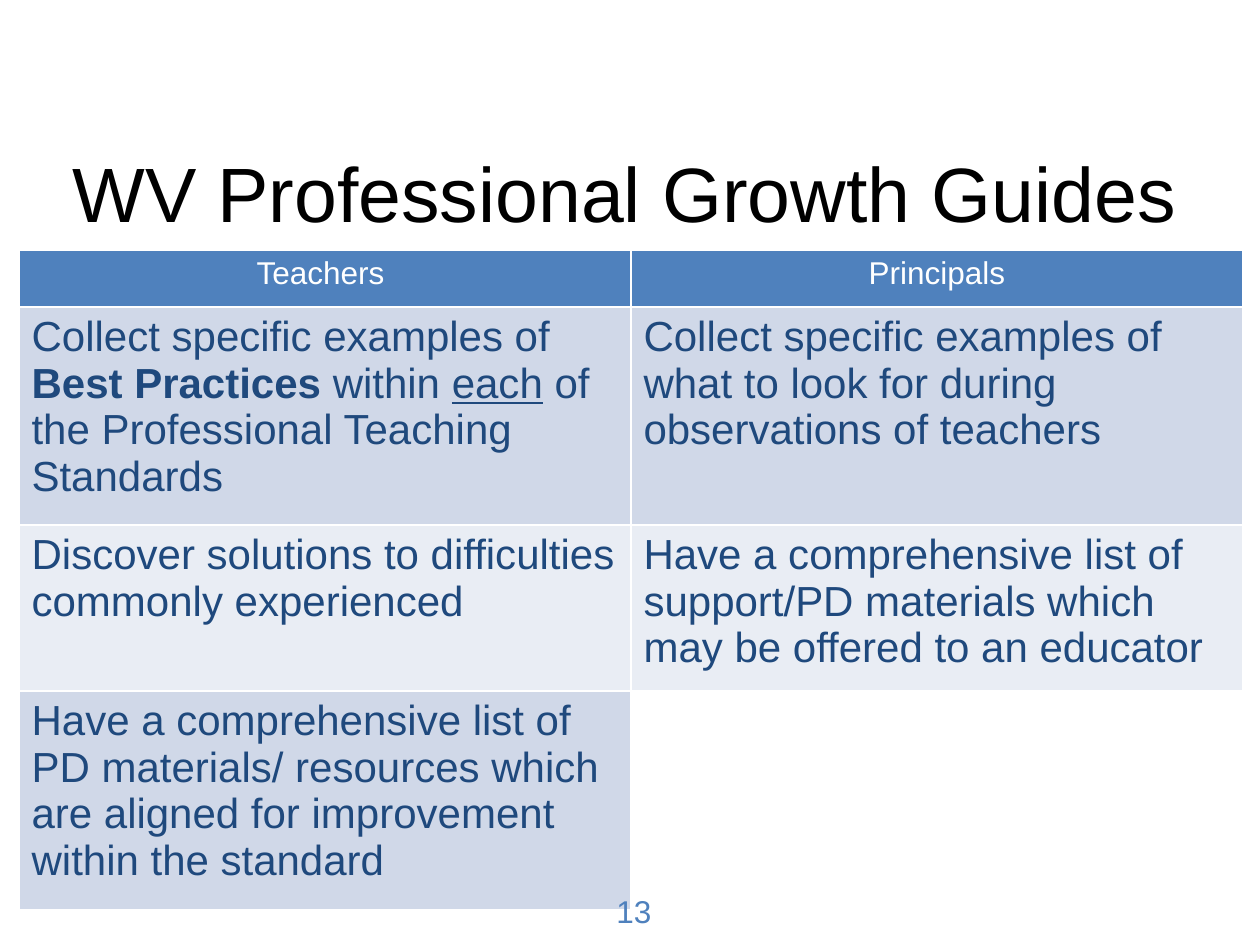
from pptx import Presentation
from pptx.dml.color import RGBColor
from pptx.enum.text import MSO_ANCHOR as Anchor, PP_ALIGN as Align
from pptx.util import Pt

PX = 914400 // 126  # EMU per pixel
FONT = "Arial"
BLACK, WHITE, NAVY, BLUE = "000000", "FFFFFF", "1F497D", "4F81BD"
BANDS = ["D0D8E8", "E9EDF4"]


def color(hex_text):
    return RGBColor.from_string(hex_text)


class Deck:
    def __init__(self, width, height):
        self.prs = Presentation()
        self.prs.slide_width, self.prs.slide_height = width * PX, height * PX
        self.s = self.prs.slides.add_slide(self.prs.slide_layouts[6])

    def add_runs(self, p, runs, size, ink, align=Align.LEFT):
        """Fill a paragraph with (text, style) runs; style is '', 'bold' or 'underline'."""
        p.alignment = align
        for text, style in runs:
            r = p.add_run()
            r.text = text
            r.font.name, r.font.size = FONT, Pt(size)
            r.font.color.rgb = color(ink)
            r.font.bold = style == "bold"
            r.font.underline = style == "underline"

    def text(self, box, text, size, ink, align=Align.LEFT, anchor=Anchor.TOP):
        tf = self.s.shapes.add_textbox(*(v * PX for v in box)).text_frame
        tf.word_wrap = True
        tf.vertical_anchor = anchor
        self.add_runs(tf.paragraphs[0], [(text, "")], size, ink, align)

    def table(self, left, top, col_width, row_heights, rows):
        """Draw a header row and banded body rows; an empty cell stays clear."""
        cols = len(rows[0])
        table = self.s.shapes.add_table(
            len(rows), cols, left * PX, top * PX,
            cols * col_width * PX, sum(row_heights) * PX).table
        for col in table.columns:
            col.width = col_width * PX
        for i, (height, row) in enumerate(zip(row_heights, rows)):
            table.rows[i].height = height * PX
            for j, runs in enumerate(row):
                cell = table.cell(i, j)
                if not runs:
                    cell.fill.background()
                    continue
                cell.fill.solid()
                cell.fill.fore_color.rgb = color(BANDS[(i - 1) % 2] if i else BLUE)
                p = cell.text_frame.paragraphs[0]
                if i:
                    self.add_runs(p, runs, 24, NAVY)
                else:
                    self.add_runs(p, runs, 18, WHITE, Align.CENTER)


def main():
    deck = Deck(1260, 945)
    deck.text((58, 113, 1134, 158), "WV Professional Growth Guides", 44, BLACK,
              Align.CENTER, Anchor.MIDDLE)
    guides = [
        [[("Teachers ", "")], [("Principals", "")]],
        [[("Collect specific examples of ", ""), ("Best Practices ", "bold"),
          ("within ", ""), ("each", "underline"),
          (" of the Professional Teaching Standards", "")],
         [("Collect specific examples of what to look for during "
           "observations of teachers", "")]],
        [[("Discover solutions to difficulties commonly experienced", "")],
         [("Have a comprehensive list of support/PD materials which "
           "may be offered to an educator", "")]],
        [[("Have a comprehensive list of PD materials/ resources which "
           "are aligned for improvement within the standard", "")], []],
    ]
    deck.table(19, 250, 612, [57, 218, 166, 219], guides)
    deck.text((604, 886, 68, 50), "13", 18, BLUE)
    deck.prs.save("out.pptx")


if __name__ == "__main__":
    main()
